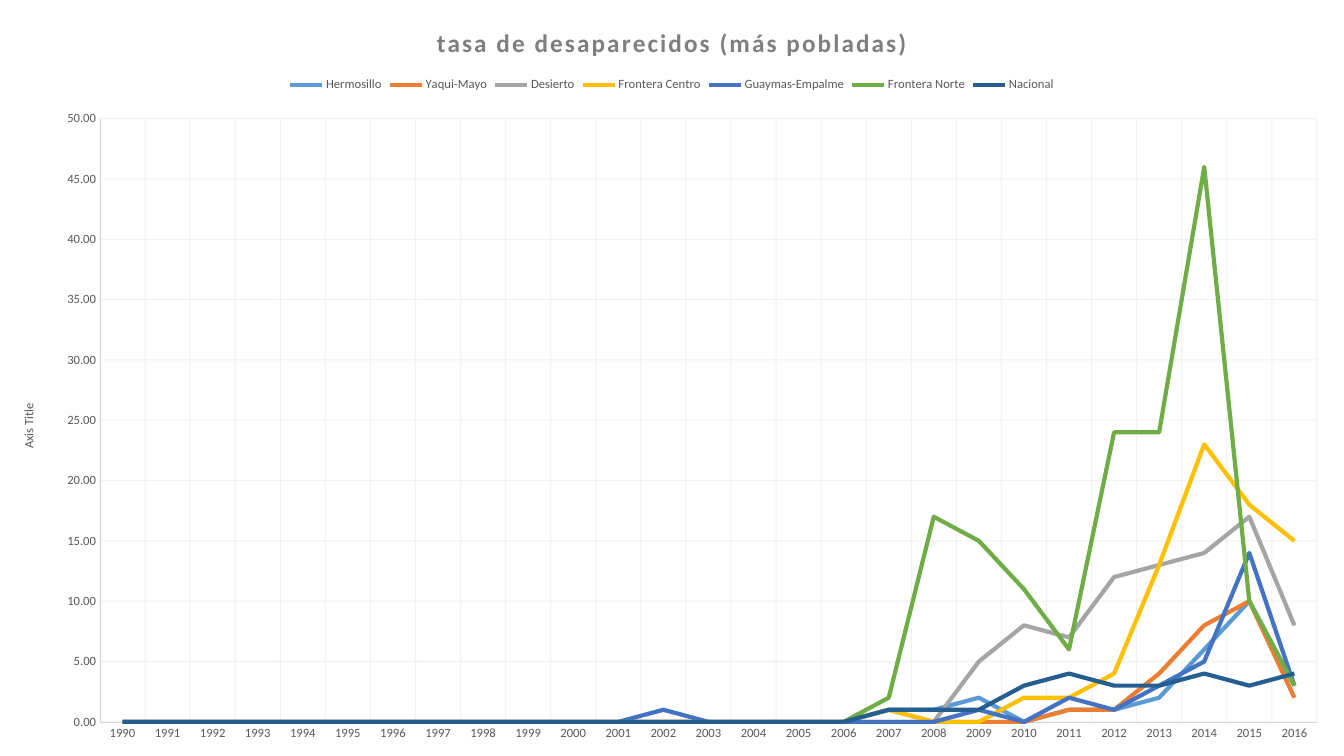
"""Build a slide with a line chart of disappearance rates by region."""
import pptx
import pptx.chart.data
import pptx.dml.color
import pptx.enum.chart
import pptx.oxml
import pptx.oxml.ns
import pptx.util

Pt = pptx.util.Pt
RGB = pptx.dml.color.RGBColor.from_string
qn = pptx.oxml.ns.qn

THEME = {
    "font": "Calibri", "title": "7F7F7F", "label": "595959", "rule": "D9D9D9",
    "title_size": 18, "label_size": 9,
    "series": ["5B9BD5", "ED7D31", "A5A5A5", "FFC000", "4472C4", "70AD47", "255E91"],
}
YEARS = range(1990, 2017)
RATES_TO_2016 = {
    "Hermosillo": [1, 1, 2, 0, 1, 1, 2, 6, 10, 3],
    "Yaqui-Mayo": [1, 1, 4, 8, 10, 2],
    "Desierto": [1, 0, 5, 8, 7, 12, 13, 14, 17, 8],
    "Frontera Centro": [1, 0, 0, 2, 2, 4, 13, 23, 18, 15],
    "Guaymas-Empalme": [1, 0, 0, 0, 0, 0, 0, 1, 0, 2, 1, 3, 5, 14, 3],
    "Frontera Norte": [2, 17, 15, 11, 6, 24, 24, 46, 10, 3],
    "Nacional": [1, 1, 1, 3, 4, 3, 3, 4, 3, 4],
}


def style_font(font, size=THEME["label_size"], color=THEME["label"], bold=False):
    font.name = THEME["font"]
    font.size = Pt(size)
    font.bold = bold
    font.color.rgb = RGB(color)


def write_text(frame, text, spacing=0, **style):
    run = frame.paragraphs[0].add_run()
    run.text = text
    style_font(run.font, **style)
    run.font._element.set("spc", str(spacing))


presentation = pptx.Presentation()
presentation.slide_width = Pt(960)
presentation.slide_height = Pt(540)
slide = presentation.slides.add_slide(presentation.slide_layouts[6])

chart_data = pptx.chart.data.CategoryChartData(number_format="0.00")
chart_data.categories = [str(year) for year in YEARS]
for name, rates in RATES_TO_2016.items():
    chart_data.add_series(name, [0] * (len(YEARS) - len(rates)) + rates)
chart = slide.shapes.add_chart(
    pptx.enum.chart.XL_CHART_TYPE.LINE, Pt(0), Pt(0), Pt(960), Pt(540), chart_data
).chart
style_font(chart.font)

chart.has_title = True
write_text(chart.chart_title.text_frame, "tasa de desaparecidos (más pobladas)",
           size=THEME["title_size"], color=THEME["title"], bold=True, spacing=150)
chart.chart_title.include_in_layout = False

chart.has_legend = True
chart.legend.position = pptx.enum.chart.XL_LEGEND_POSITION.TOP
chart.legend.include_in_layout = False
style_font(chart.legend.font)

plot = chart.plots[0]
plot.vary_by_categories = False
for series, color in zip(plot.series, THEME["series"]):
    series.smooth = False
    series.format.line.color.rgb = RGB(color)
    series.format.line.width = Pt(3)

for axis in (chart.category_axis, chart.value_axis):
    axis.major_tick_mark = pptx.enum.chart.XL_TICK_MARK.NONE
    axis.minor_tick_mark = pptx.enum.chart.XL_TICK_MARK.NONE
    style_font(axis.tick_labels.font)
    axis.has_major_gridlines = True
    for line, width in ((axis.format.line, 0.25), (axis.major_gridlines.format.line, 0.75)):
        line.color.rgb = RGB(THEME["rule"])
        line.width = Pt(width)
    grid_color = axis.major_gridlines.format.line._ln.find(".//" + qn("a:srgbClr"))
    grid_color.append(pptx.oxml.parse_xml(
        f'<a:alpha {pptx.oxml.ns.nsdecls("a")} val="32000"/>'))

value_axis = chart.value_axis
value_axis.minimum_scale = 0
value_axis.maximum_scale = 50
value_axis.major_unit = 5
value_axis.tick_labels.number_format = "0.00"
value_axis.tick_labels.number_format_is_linked = False
value_axis.has_title = True
axis_title_frame = value_axis.axis_title.text_frame
write_text(axis_title_frame, "Axis Title")
axis_title_body = axis_title_frame._txBody.find(qn("a:bodyPr"))
axis_title_body.set("rot", "-5400000")
axis_title_body.set("vert", "horz")

plot_area = chart._chartSpace.chart.plotArea
for layout in plot_area.findall(qn("c:layout")):
    plot_area.remove(layout)
plot_area.insert(0, pptx.oxml.parse_xml(
    f'<c:layout {pptx.oxml.ns.nsdecls("c")}><c:manualLayout>'
    '<c:layoutTarget val="inner"/><c:xMode val="edge"/><c:yMode val="edge"/>'
    '<c:x val="0.0744"/><c:y val="0.157"/><c:w val="0.9055"/><c:h val="0.798"/>'
    '</c:manualLayout></c:layout>'))

presentation.save("out.pptx")
